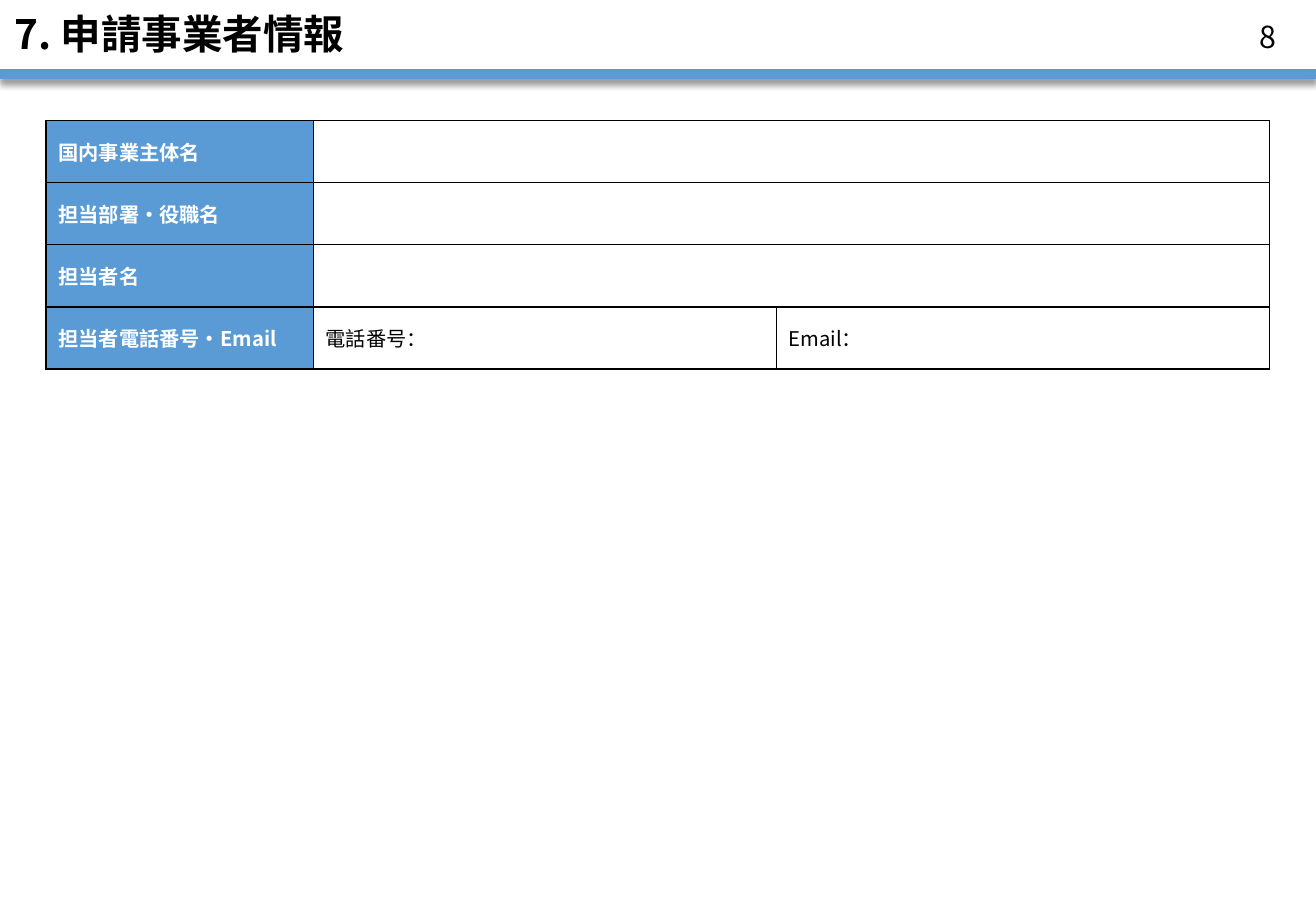
"""Build the applicant information slide with its contact table."""
from dataclasses import dataclass

from lxml import etree
from pptx import Presentation
from pptx import util as u
from pptx.dml.color import RGBColor
from pptx.enum import shapes, text
from pptx.oxml import ns

WIDE, HIGH = u.Inches(10.83), u.Inches(7.5)
BLUE = RGBColor(0x5B, 0x9B, 0xD5)
WHITE = RGBColor(0xFF, 0xFF, 0xFF)
BLACK = RGBColor(0, 0, 0)
FONT = "Noto Sans CJK JP"
COLS = (20.31, 35.18, 37.49)
ROW = 6.83


@dataclass(frozen=True)
class Box:
    """Place on the slide, in percent of its width and height."""
    left: float
    top: float
    width: float
    height: float

    def emu(self) -> tuple[int, int, int, int]:
        return (across(self.left), down(self.top),
                across(self.width), down(self.height))


@dataclass(frozen=True)
class Entry:
    """One table row: its label and the fields beside it."""
    label: str
    fields: tuple[str, ...] = ()


ENTRIES = (
    Entry("国内事業主体名"),
    Entry("担当部署・役職名"),
    Entry("担当者名"),
    Entry("担当者電話番号・Email", ("電話番号：", "Email：")),
)


def across(share: float) -> int:
    return round(WIDE * share / 100)


def down(share: float) -> int:
    return round(HIGH * share / 100)


def add(root, tag: str, **attrs: str):
    return etree.SubElement(root, ns.qn(tag), attrs)


def write(frame, words: str, *, size: float, color: RGBColor = BLACK,
          bold: bool = False, align=text.PP_ALIGN.LEFT,
          space: float = 1.0) -> None:
    para = frame.paragraphs[0]
    para.alignment = align
    para.line_spacing = space
    run = para.add_run()
    run.text = words
    font = run.font
    font.name, font.size, font.bold = FONT, u.Pt(size), bold
    font.color.rgb = color
    add(font._element, "a:ea", typeface=FONT)


def inset(frame, side: float, edge: float) -> None:
    frame.word_wrap = True
    frame.vertical_anchor = text.MSO_ANCHOR.MIDDLE
    frame.margin_left = frame.margin_right = u.Inches(side)
    frame.margin_top = frame.margin_bottom = u.Inches(edge)


def rule(slide, level: float) -> None:
    line = slide.shapes.add_connector(
        shapes.MSO_CONNECTOR.STRAIGHT, 0, down(level), WIDE, down(level))
    line.line.color.rgb = BLUE
    line.line.width = u.Pt(6)
    glow = add(add(line._element.spPr, "a:effectLst"), "a:outerShdw",
               blurRad=str(u.Pt(4)), dist=str(u.Pt(3)), dir="5400000",
               algn="t", rotWithShape="0")
    add(add(glow, "a:srgbClr", val=str(BLACK)), "a:alpha", val="40000")


def title(slide, words: str, box: Box) -> None:
    frame = slide.shapes.add_textbox(*box.emu()).text_frame
    inset(frame, 0.12, 0.04)
    write(frame, words, size=24, bold=True, space=0.9)


def badge(slide, words: str, box: Box) -> None:
    shape = slide.shapes.add_shape(shapes.MSO_SHAPE.RECTANGLE, *box.emu())
    shape.shadow.inherit = False
    shape.fill.solid()
    shape.fill.fore_color.rgb = WHITE
    shape.line.fill.background()
    inset(shape.text_frame, 0, 0.05)
    write(shape.text_frame, words, size=18, align=text.PP_ALIGN.CENTER)


def border(cell) -> None:
    props = cell._tc.get_or_add_tcPr()
    for side in "LRTB":
        edge = add(props, f"a:ln{side}", w=str(u.Pt(1)))
        add(add(edge, "a:solidFill"), "a:srgbClr", val=str(BLACK))


def table(slide, left: float, top: float) -> None:
    box = Box(left, top, sum(COLS), ROW * len(ENTRIES))
    grid = slide.shapes.add_table(len(ENTRIES), len(COLS), *box.emu()).table
    grid.first_row = grid.horz_banding = False
    for col, share in zip(grid.columns, COLS):
        col.width = across(share)
    for row in grid.rows:
        row.height = down(ROW)
    for cell in grid.iter_cells():
        border(cell)
        cell.fill.background()
        cell.vertical_anchor = text.MSO_ANCHOR.MIDDLE
    for row, entry in enumerate(ENTRIES):
        head = grid.cell(row, 0)
        head.fill.solid()
        head.fill.fore_color.rgb = BLUE
        write(head.text_frame, entry.label, size=12, color=WHITE, bold=True)
        for col, field in enumerate(entry.fields, 1):
            write(grid.cell(row, col).text_frame, field, size=12)
        if not entry.fields:
            grid.cell(row, 1).merge(grid.cell(row, 2))


def main() -> None:
    deck = Presentation()
    deck.slide_width, deck.slide_height = WIDE, HIGH
    slide = deck.slides.add_slide(deck.slide_layouts[6])
    rule(slide, 8.13)
    title(slide, "7. 申請事業者情報", Box(0, 0, 100, 7.87))
    table(slide, 3.51, 13.2)
    badge(slide, "8", Box(94.55, 1.87, 3.6, 4.13))
    deck.save("out.pptx")


if __name__ == "__main__":
    main()
